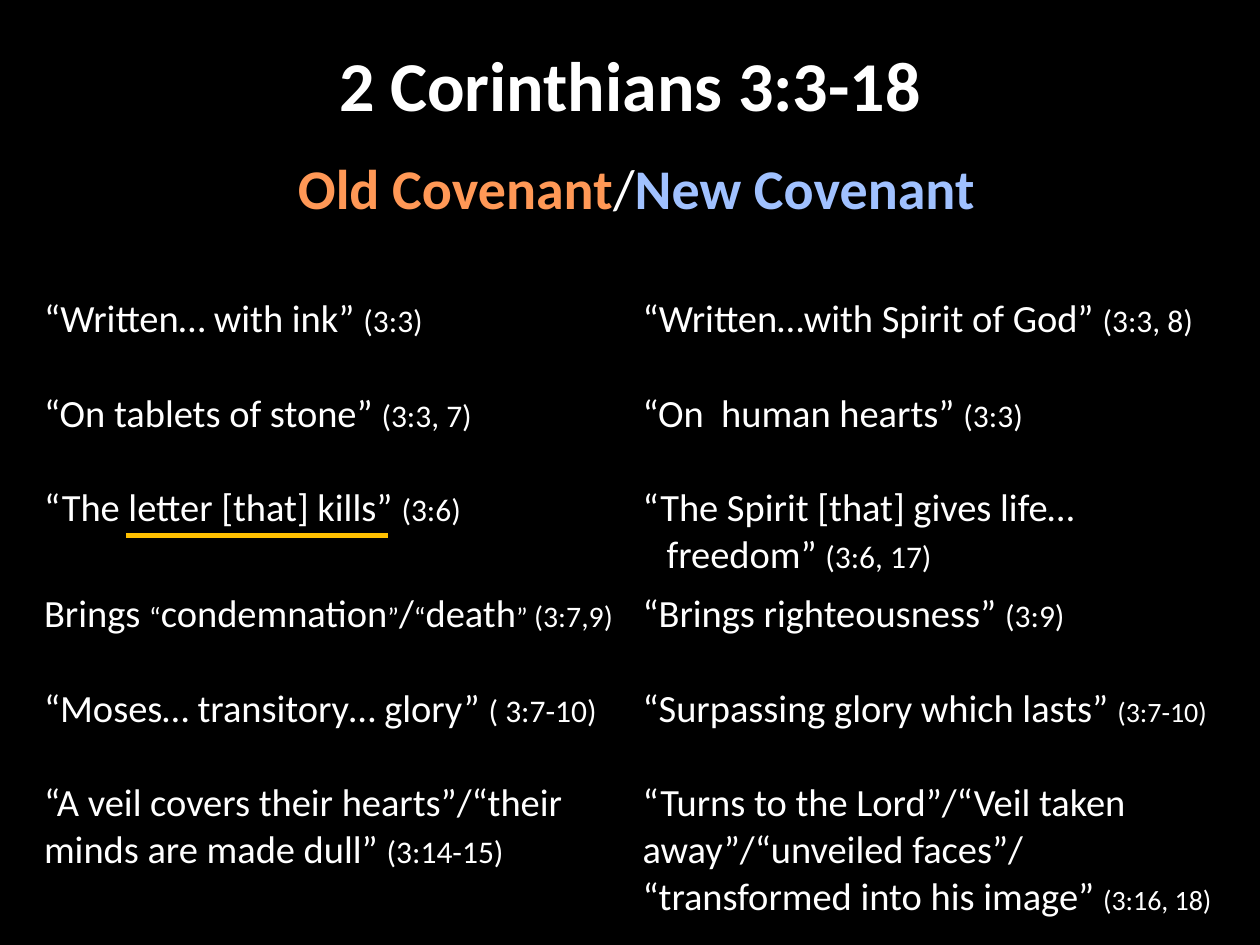
from typing import NamedTuple

from lxml import etree
from pptx import Presentation
from pptx.dml.color import RGBColor
from pptx.enum.shapes import MSO_CONNECTOR
from pptx.enum.text import MSO_ANCHOR, MSO_AUTO_SIZE, PP_ALIGN
from pptx.oxml.ns import qn
from pptx.util import Inches, Pt

STRAIGHT = MSO_CONNECTOR.STRAIGHT
TOP = MSO_ANCHOR.TOP
NO_FIT = MSO_AUTO_SIZE.NONE
CENTER = PP_ALIGN.CENTER

BLACK = RGBColor(0x00, 0x00, 0x00)
WHITE = RGBColor(0xFF, 0xFF, 0xFF)
ORANGE = RGBColor(0xFF, 0x98, 0x56)
BLUE = RGBColor(0xA0, 0xC1, 0xFF)
GOLD = RGBColor(0xFF, 0xC0, 0x00)

FONT = "Calibri"
QUOTE_SIZE = 22
HANG = 0.19
PLAIN_TABLE_STYLE = "{2D5ABB26-0587-4C30-8999-92F81FD0307C}"


class Span(NamedTuple):
    text: str
    size: float = QUOTE_SIZE


class Entry(NamedTuple):
    spans: list[Span]
    hang: float = HANG


def verse(quote: str, reference: str, size: float = 18, hang: float = HANG) -> Entry:
    """A quotation followed by its smaller verse reference."""
    return Entry([Span(quote + " "), Span(reference, size)], hang)


CONDEMNATION = Entry(
    [Span("Brings "), Span("“", 16), Span("condemnation"), Span("”", 16), Span("/"),
     Span("“", 16), Span("death"), Span("” ", 16), Span("(3:7,9)", 17)],
    hang=0,
)

# Each row pairs the old covenant with the new
COMPARISON = [
    (verse("“Written… with ink”", "(3:3)"),
     verse("“Written…with Spirit of God”", "(3:3, 8)")),
    (verse("“On tablets of stone”", "(3:3, 7)"),
     verse("“On  human hearts”", "(3:3)")),
    (verse("“The letter [that] kills”", "(3:6)"),
     verse("“The Spirit [that] gives life… freedom”", "(3:6, 17)")),
    (CONDEMNATION,
     verse("“Brings righteousness”", "(3:9)", hang=0)),
    (verse("“Moses… transitory… glory”", "( 3:7-10)"),
     verse("“Surpassing glory which lasts”", "(3:7-10)", 16)),
    (verse("“A veil covers their hearts”/“their minds are made dull”", "(3:14-15)", hang=0),
     verse("“Turns to the Lord”/“Veil taken away”/“unveiled faces”/ "
           "“transformed into his image”", "(3:16, 18)", 16, hang=0)),
]


def place(shape, left: float, top: float, width: float, height: float) -> None:
    shape.left, shape.top = Inches(left), Inches(top)
    shape.width, shape.height = Inches(width), Inches(height)


def set_hang(paragraph, hang: float) -> None:
    properties = paragraph._p.get_or_add_pPr()
    properties.set("marL", str(Inches(hang)))
    properties.set("indent", str(-Inches(hang)))


def add_title(page) -> None:
    title = page.shapes.title
    place(title, 0.5, 0.33, 9, 1)
    frame = title.text_frame
    frame.auto_size = NO_FIT
    frame.vertical_anchor = TOP
    frame.margin_left = frame.margin_right = frame.margin_top = frame.margin_bottom = 0
    paragraph = frame.paragraphs[0]
    paragraph.text = "2 Corinthians 3:3-18"
    paragraph.alignment = CENTER
    font = paragraph.font
    font.name, font.size, font.bold = FONT, Pt(40), True
    font.color.rgb = WHITE


def add_subtitle(page) -> None:
    body = page.placeholders[1]
    place(body, 0.5, 1.17, 9, 0.64)
    body.text_frame.auto_size = NO_FIT
    paragraph = body.text_frame.paragraphs[0]
    set_hang(paragraph, 0.38)
    paragraph.alignment = CENTER
    paragraph.space_before = Pt(0)
    etree.SubElement(paragraph._p.get_or_add_pPr(), qn("a:buNone"))
    paragraph.font.name, paragraph.font.size = FONT, Pt(32)
    for text, color, bold in ((" Old Covenant", ORANGE, True), ("/", WHITE, False),
                              ("New Covenant", BLUE, True)):
        run = paragraph.add_run()
        run.text = text
        run.font.bold = bold
        run.font.color.rgb = color


def fill_cell(cell, entry: Entry) -> None:
    cell.fill.background()
    paragraph = cell.text_frame.paragraphs[0]
    set_hang(paragraph, entry.hang)
    paragraph.font.name = FONT
    paragraph.font.size = Pt(QUOTE_SIZE)
    for span in entry.spans:
        run = paragraph.add_run()
        run.text = span.text
        run.font.name, run.font.size = FONT, Pt(span.size)
        run.font.color.rgb = WHITE


def add_comparison(page) -> None:
    frame = page.shapes.add_table(len(COMPARISON), 2, Inches(0.25), Inches(2.3),
                                  Inches(9.5), Inches(0.75 * len(COMPARISON)))
    table = frame.table
    table.first_row = table.horz_banding = False
    table._tbl.tblPr.find(qn("a:tableStyleId")).text = PLAIN_TABLE_STYLE
    for row, entries in zip(table.rows, COMPARISON):
        for cell, entry in zip(row.cells, entries):
            fill_cell(cell, entry)


def add_underline(page) -> None:
    line = page.shapes.add_connector(STRAIGHT, Inches(1), Inches(4.25),
                                     Inches(3.08), Inches(4.25))
    line.line.color.rgb = GOLD
    line.line.width = Pt(3)
    etree.SubElement(line._element.spPr, qn("a:effectLst"))


def main() -> None:
    deck = Presentation()
    deck.slide_width, deck.slide_height = Inches(10), Inches(7.5)
    page = deck.slides.add_slide(deck.slide_layouts[1])
    page.background.fill.solid()
    page.background.fill.fore_color.rgb = BLACK
    add_title(page)
    add_subtitle(page)
    add_comparison(page)
    add_underline(page)
    deck.save("out.pptx")


if __name__ == "__main__":
    main()
